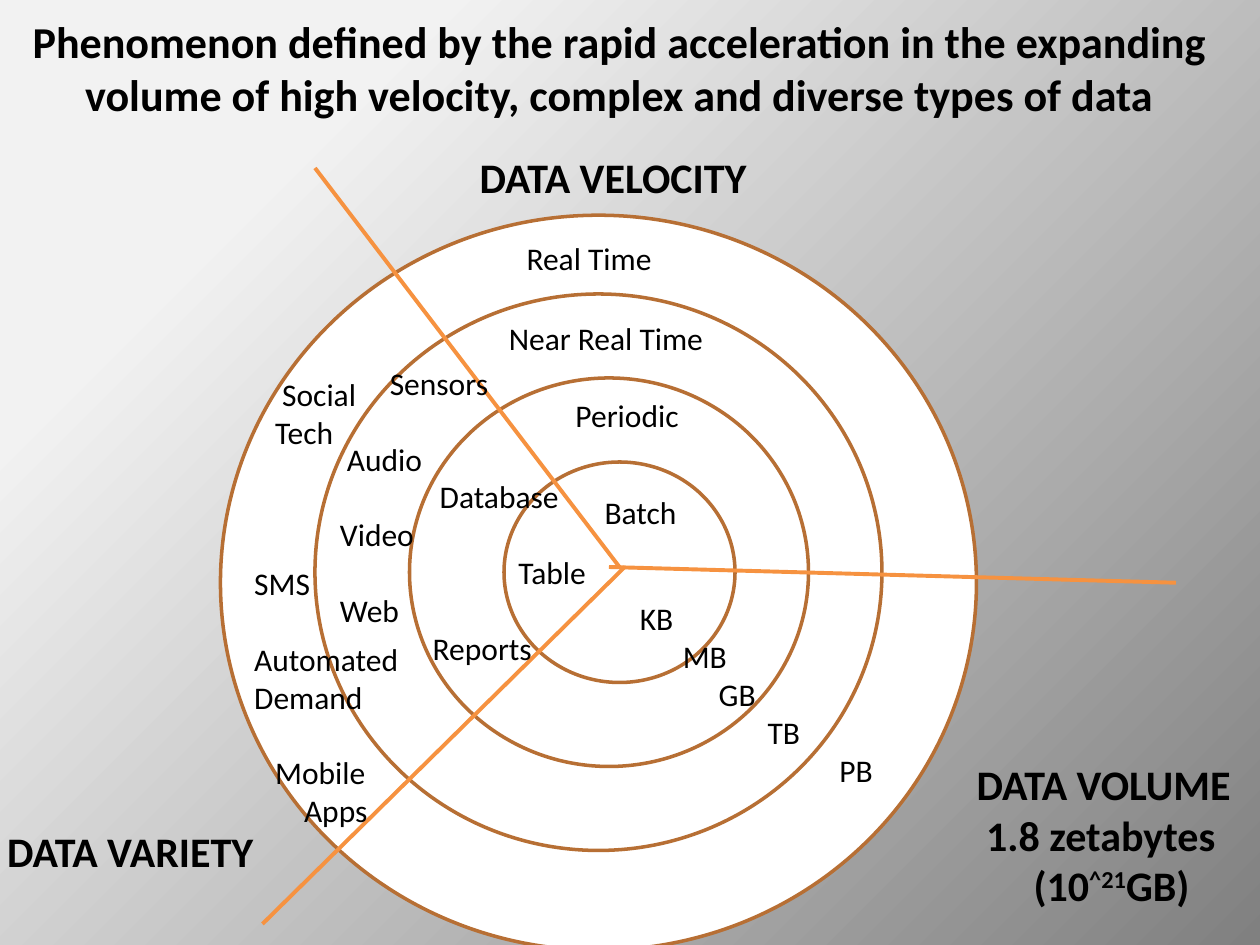
from lxml import etree
from pptx import Presentation
from pptx.dml.color import RGBColor
from pptx.enum.shapes import MSO_CONNECTOR, MSO_SHAPE
from pptx.enum.text import MSO_ANCHOR, PP_ALIGN
from pptx.oxml import parse_xml
from pptx.oxml.ns import qn
from pptx.util import Pt

STRAIGHT = MSO_CONNECTOR.STRAIGHT
OVAL = MSO_SHAPE.OVAL
MIDDLE = MSO_ANCHOR.MIDDLE
LEFT, CENTER = PP_ALIGN.LEFT, PP_ALIGN.CENTER

BLACK = RGBColor(0x00, 0x00, 0x00)
WHITE = RGBColor(0xFF, 0xFF, 0xFF)
BROWN = RGBColor(0xB7, 0x6F, 0x34)
ORANGE = RGBColor(0xF6, 0x92, 0x40)
GRAY = RGBColor(0x80, 0x80, 0x80)
PALE = RGBColor(0xF2, 0xF2, 0xF2)

FONT = "Calibri"
LABEL, HEADING, TITLE = 18, 24, 25.2
ROW = 21.6  # height of one label line

DRAWING = "http://schemas.openxmlformats.org/drawingml/2006/main"


class Sketch:
    def __init__(self, page):
        self.page = page

    def background(self, stops):
        """Radial gradient that starts in the bottom right corner."""
        fill = self.page.background.fill
        fill.gradient()
        properties = self.page.element.find(".//" + qn("p:bgPr"))
        marks = "".join(
            f'<a:gs pos="{percent * 1000}"><a:srgbClr val="{color}"/></a:gs>'
            for percent, color in stops)
        gradient = parse_xml(
            f'<a:gradFill xmlns:a="{DRAWING}" rotWithShape="1">'
            f'<a:gsLst>{marks}</a:gsLst><a:path path="circle">'
            '<a:fillToRect l="100000" t="100000"/></a:path>'
            '<a:tileRect r="-100000" b="-100000"/></a:gradFill>')
        properties.replace(properties.find(qn("a:gradFill")), gradient)

    def ring(self, left, top, width, height, filled=True):
        ring = self.page.shapes.add_shape(
            OVAL, Pt(left), Pt(top), Pt(width), Pt(height))
        ring.shadow.inherit = False
        if filled:
            ring.fill.solid()
            ring.fill.fore_color.rgb = WHITE
        else:
            ring.fill.background()
        ring.line.color.rgb = BROWN
        ring.line.width = Pt(2)

    def divider(self, x1, y1, x2, y2):
        line = self.page.shapes.add_connector(
            STRAIGHT, Pt(x1), Pt(y1), Pt(x2), Pt(y2))
        line.line.color.rgb = ORANGE
        line.line.width = Pt(2.25)
        properties = line._element.spPr
        etree.SubElement(properties, qn("a:effectLst"))

    def text(self, left, top, width, height, lines, size=LABEL, bold=False,
             align=LEFT, anchor=None):
        """Each line is (text or spans, indent, empty rows above)."""
        box = self.page.shapes.add_textbox(
            Pt(left), Pt(top), Pt(width), Pt(height))
        frame = box.text_frame
        frame.word_wrap = True
        if anchor is not None:
            frame.vertical_anchor = anchor
        for index, (content, indent, gap) in enumerate(lines):
            para = frame.add_paragraph() if index else frame.paragraphs[0]
            para.alignment = align
            para.space_before = Pt(gap * ROW)
            para.font.name, para.font.size = FONT, Pt(size)
            para.font.bold, para.font.color.rgb = bold, BLACK
            if indent:
                para._p.get_or_add_pPr().set("marL", str(Pt(indent)))
            spans = [(content, 0)] if isinstance(content, str) else content
            for words, raised in spans:
                span = para.add_run()
                span.text = words
                if raised:
                    span.font._element.set("baseline", str(raised * 1000))


def main():
    deck = Presentation()
    deck.slide_width, deck.slide_height = Pt(720), Pt(540)
    page = deck.slides.add_slide(deck.slide_layouts[6])
    sketch = Sketch(page)
    sketch.background([(0, GRAY), (80, PALE), (100, PALE)])

    # Title
    sketch.text(-12, 7, 732, 63, [(
        "Phenomenon defined by the rapid acceleration in the expanding "
        "volume of high velocity, complex and diverse types of data", 0, 0)],
        TITLE, True, CENTER, MIDDLE)

    # Rings, from the outside in
    sketch.ring(126, 123, 432, 420)
    sketch.ring(180, 168, 324, 318, filled=False)
    sketch.ring(234, 216, 228, 222)
    sketch.ring(288, 264, 132, 126)

    # Dividers between the three sectors
    sketch.divider(180, 96, 354, 324)
    sketch.divider(348, 324, 672, 333)
    sketch.divider(357, 324, 150, 528)

    # Sector headings
    volume = [("DATA VOLUME", 0, 0), ("1.8 zetabytes", 5.4, 0),
              ([("(10", 0), ("^21", 30), ("GB)", 0)], 32.5, 0)]
    sketch.text(267, 83, 171, 37, [("DATA VELOCITY", 0, 0)], HEADING, True)
    sketch.text(-3, 468, 159, 36, [("DATA VARIETY", 0, 0)], HEADING, True)
    sketch.text(551, 430, 171, 124, volume, HEADING, True)

    # Velocity labels, from the centre out
    for name, left, top, width in [
            ("Batch", 338.4, 278, 73), ("Periodic", 321.8, 223, 97),
            ("Near Real Time", 283.7, 178.6, 128),
            ("Real Time", 293.8, 133.2, 102)]:
        sketch.text(left, top, width, 29, [(name, 0, 0)])

    # Variety labels: outer ring, then the inner rings
    sketch.text(138.2, 211, 261, 269, [
        ("Social", 16, 0), ("Tech", 12, 0), ("SMS", 0, 3),
        ("Automated", 0, 1), ("Demand", 0, 0),
        ("Mobile", 12, 1), ("Apps", 28.5, 0)])
    sketch.text(187.2, 204.5, 269, 181, [
        ("Sensors", 28.5, 0), ("Audio", 4, 1), ("Database", 57, 0),
        ("Video", 0, 0), ("Table", 102, 0), ("Web", 0, 0),
        ("Reports", 53, 0)])

    # Volume labels
    sketch.text(358.6, 339, 261, 117, [
        ("KB", 0, 0), ("MB", 24.5, 0), ("GB", 45, 0),
        ("TB", 73, 0), ("PB", 114, 0)])

    deck.save("out.pptx")


if __name__ == "__main__":
    main()
